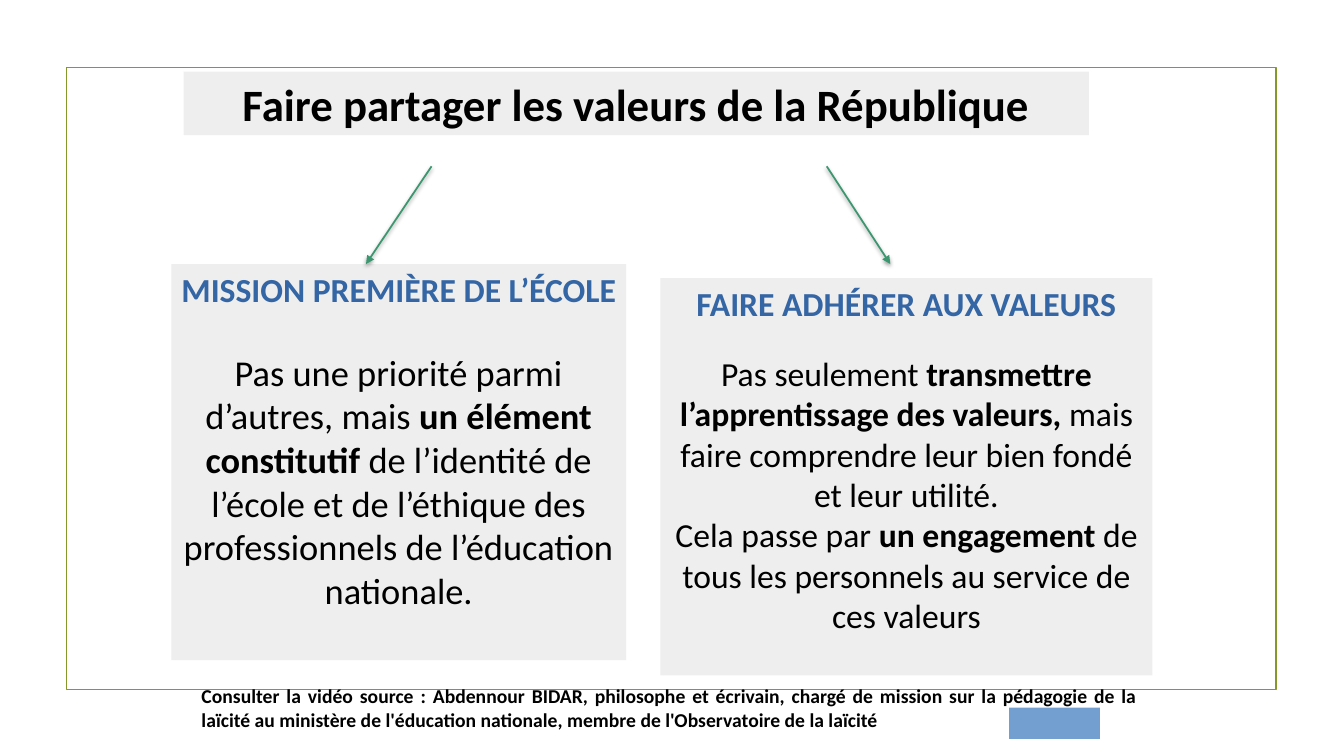
"""Build the slide on sharing the values of the Republic."""
from dataclasses import dataclass

from lxml import etree
from pptx import Presentation
from pptx.dml.color import RGBColor
from pptx.enum.shapes import MSO_CONNECTOR as Connector, MSO_SHAPE as Shape
from pptx.enum.text import MSO_ANCHOR as Anchor, MSO_AUTO_SIZE as AutoSize, PP_ALIGN as Align
from pptx.oxml import parse_xml
from pptx.oxml.ns import nsdecls, qn
from pptx.util import Inches, Pt


@dataclass(frozen=True)
class Theme:
    font: str = "Calibri"
    ink: str = "000000"
    heading: str = "3465A4"
    panel: str = "EEEEEE"
    frame: str = "83992A"
    arrow: str = "3C9770"
    accent: str = "729FCF"
    title_size: int = 32
    heading_size: int = 24
    note_size: int = 14
    line_width: float = 1.25


THEME = Theme()
SLIDE_SIZE = (13.33, 7.5)
FRAME_BOX = (0.66, 0.67, 12, 6.17)
ACCENT_BOX = (10.01, 7.02, 0.9, 0.31)
TITLE = ("Faire partager les valeurs de la République", (1.82, 0.71, 8.98, 0.63))
CARDS = [
    {
        "box": (1.7, 2.62, 4.51, 3.93),
        "heading": "MISSION PREMIÈRE DE L’ÉCOLE",
        "size": 26,
        "gap": 29,
        "body": [
            [
                ("Pas une priorité parmi d’autres, mais", False),
                (" un élément constitutif ", True),
                ("de l’identité de l’école et de l’éthique des "
                 "professionnels de l’éducation nationale.", False),
            ],
        ],
    },
    {
        "box": (6.55, 2.76, 4.88, 3.94),
        "heading": "FAIRE ADHÉRER AUX VALEURS",
        "size": 24,
        "gap": 21,
        "body": [
            [
                ("Pas seulement ", False),
                ("transmettre l’apprentissage des valeurs,", True),
                (" mais faire comprendre leur bien fondé et leur utilité.", False),
            ],
            [
                ("Cela passe par ", False),
                ("un engagement", True),
                (" de tous les personnels au service de ces valeurs", False),
            ],
        ],
    },
]
ARROW_TOP, ARROW_BOTTOM = 1.65, 2.62
ARROWS = [(4.28, 3.63), (8.2, 8.83)]
NOTE = (
    "Consulter la vidéo source : Abdennour BIDAR, philosophe et écrivain, "
    "chargé de mission sur la pédagogie de la laïcité au ministère de l'éducation "
    "nationale, membre de l'Observatoire de la laïcité",
    (1.9, 6.74, 9.48, 0.66),
)


def color(value):
    return RGBColor.from_string(value)


def inches(values):
    return [Inches(value) for value in values]


def add_box(slide, box, fill=None, line=None):
    shape = slide.shapes.add_shape(Shape.RECTANGLE, *inches(box))
    shape.shadow.inherit = False
    if fill:
        shape.fill.solid()
        shape.fill.fore_color.rgb = color(fill)
    else:
        shape.fill.background()
    if line:
        shape.line.color.rgb = color(line)
        shape.line.width = Pt(THEME.line_width)
    else:
        shape.line.fill.background()
    return shape


def prepare_frame(shape):
    frame = shape.text_frame
    frame.word_wrap = True
    frame.auto_size = AutoSize.NONE
    frame.vertical_anchor = Anchor.TOP
    return frame


def write(paragraph, pieces, size, ink=THEME.ink, align=Align.CENTER):
    paragraph.alignment = align
    for text, bold in pieces:
        run = paragraph.add_run()
        run.text = text
        run.font.name = THEME.font
        run.font.size = Pt(size)
        run.font.bold = bold
        run.font.color.rgb = color(ink)


def add_title(slide):
    text, box = TITLE
    title = slide.shapes.title
    title.left, title.top, title.width, title.height = inches(box)
    title.fill.solid()
    title.fill.fore_color.rgb = color(THEME.panel)
    write(prepare_frame(title).paragraphs[0], [(text, True)], THEME.title_size)


def add_card(slide, card):
    frame = prepare_frame(add_box(slide, card["box"], THEME.panel))
    write(frame.paragraphs[0], [(card["heading"], True)], THEME.heading_size, THEME.heading)
    for index, pieces in enumerate(card["body"]):
        paragraph = frame.add_paragraph()
        if index == 0:
            paragraph.space_before = Pt(card["gap"])
        write(paragraph, pieces, card["size"])


def add_arrow(slide, start, end):
    arrow = slide.shapes.add_connector(
        Connector.STRAIGHT, *inches((start, ARROW_TOP, end, ARROW_BOTTOM)))
    arrow.line.color.rgb = color(THEME.arrow)
    arrow.line.width = Pt(THEME.line_width)
    etree.SubElement(arrow.line._get_or_add_ln(), qn("a:tailEnd"), type="triangle")
    arrow._element.spPr.append(parse_xml(
        f'<a:effectLst {nsdecls("a")}>'
        f'<a:outerShdw blurRad="{Pt(3.1)}" dist="{Pt(1.6)}" dir="5400000" rotWithShape="0">'
        f'<a:srgbClr val="{THEME.ink}"><a:alpha val="38000"/></a:srgbClr>'
        '</a:outerShdw></a:effectLst>'))


def add_note(slide):
    text, box = NOTE
    frame = prepare_frame(slide.shapes.add_textbox(*inches(box)))
    write(frame.paragraphs[0], [(text, True)], THEME.note_size, align=Align.JUSTIFY)


def main():
    presentation = Presentation()
    presentation.slide_width, presentation.slide_height = inches(SLIDE_SIZE)
    slide = presentation.slides.add_slide(presentation.slide_layouts[5])
    add_box(slide, FRAME_BOX, line=THEME.frame)
    add_title(slide)
    for card, arrow in zip(CARDS, ARROWS):
        add_card(slide, card)
        add_arrow(slide, *arrow)
    add_box(slide, ACCENT_BOX, THEME.accent)
    add_note(slide)
    presentation.save("out.pptx")


if __name__ == "__main__":
    main()
